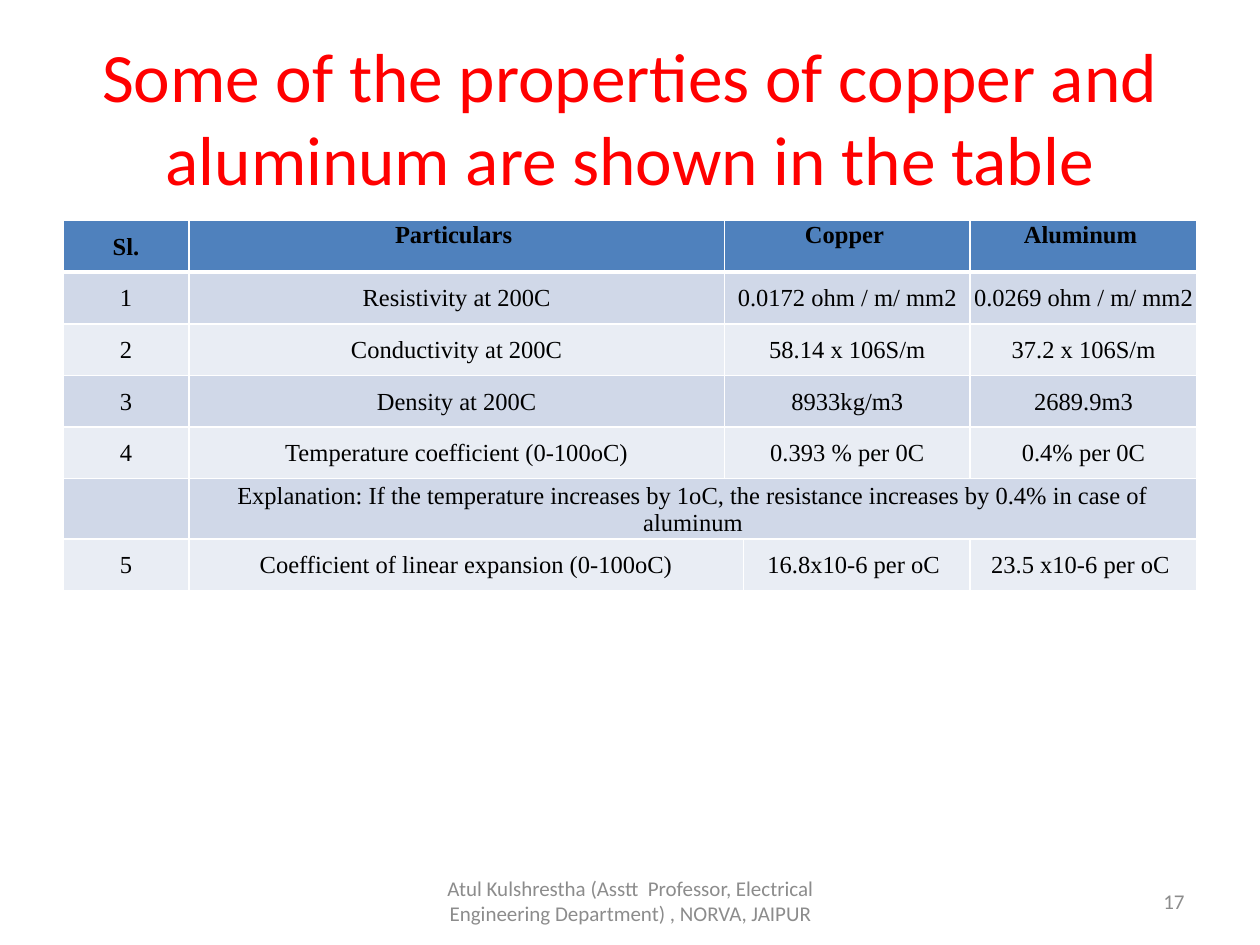
from dataclasses import dataclass

from lxml.etree import SubElement
from pptx import Presentation
from pptx.dml.color import RGBColor
from pptx.enum.text import MSO_ANCHOR, PP_ALIGN
from pptx.oxml.ns import qn
from pptx.util import Inches, Pt


@dataclass(frozen=True)
class Theme:
    heading_font: str = "Calibri"
    table_font: str = "Times New Roman"
    title_size: float = 39.6
    table_size: float = 14
    footer_size: float = 12
    title: str = "FF0000"
    table_text: str = "000000"
    footer: str = "8C8C8C"
    header_fill: str = "4F81BD"
    bands: tuple[str, str] = ("D0D8E8", "E9EDF4")
    border: str = "FFFFFF"
    border_width: float = 1
    header_rule: float = 3


@dataclass(frozen=True)
class Label:
    text: str
    box: tuple[float, float, float, float]
    size: float
    color: str
    align: PP_ALIGN = PP_ALIGN.CENTER


@dataclass(frozen=True)
class Row:
    texts: tuple[str, ...]
    spans: tuple[int, ...] = (1, 1, 2, 1)
    height: float = 0.41


THEME = Theme()

LABELS = (
    Label("Some of the properties of copper and aluminum are shown in the table",
          (0.5, 0.3, 9, 1.25), THEME.title_size, THEME.title),
    Label("17", (7.17, 6.95, 2.33, 0.4), THEME.footer_size, THEME.footer, PP_ALIGN.RIGHT),
    Label("Atul Kulshrestha (Asstt  Professor, Electrical Engineering Department) , NORVA, JAIPUR",
          (3.42, 6.95, 3.17, 0.4), THEME.footer_size, THEME.footer),
)

COLUMN_WIDTHS = (1, 4.25, 0.15, 1.8, 1.8)
PROPERTIES = (
    Row(("Sl.", "Particulars ", "Copper ", "Aluminum ")),
    Row(("1", "Resistivity at 200C", "0.0172 ohm / m/ mm2", "0.0269 ohm / m/ mm2")),
    Row(("2", "Conductivity at 200C", "58.14 x 106S/m", "37.2 x 106S/m")),
    Row(("3", "Density at 200C", "8933kg/m3", "2689.9m3")),
    Row(("4", "Temperature coefficient (0-100oC)", "0.393 % per 0C", "0.4% per 0C")),
    Row(("", "Explanation: If the temperature increases by 1oC, the resistance "
         "increases by 0.4% in case of aluminum"), (1, 4), 0.48),
    Row(("5", "Coefficient of linear expansion (0-100oC)",
         "16.8x10-6 per oC ", "23.5 x10-6 per oC "), (1, 2, 1, 1)),
)


def set_format(target, values: dict) -> None:
    for attribute, value in values.items():
        setattr(target, attribute, value)


def write(paragraph, text: str, align: PP_ALIGN, color: str, font: dict) -> None:
    paragraph.text = text
    paragraph.alignment = align
    set_format(paragraph.font, font)
    for run in paragraph.runs:
        set_format(run.font, font)
        run.font.color.rgb = RGBColor.from_string(color)


def add_label(slide, label: Label) -> None:
    frame = slide.shapes.add_textbox(*map(Inches, label.box)).text_frame
    set_format(frame, {"word_wrap": True, "vertical_anchor": MSO_ANCHOR.MIDDLE})
    write(frame.paragraphs[0], label.text, label.align, label.color,
          {"name": THEME.heading_font, "size": Pt(label.size)})


def add_borders(cell, row_index: int) -> None:
    """Rule all four sides, with a heavier line between header and body."""
    heavy_side = {0: "lnB", 1: "lnT"}.get(row_index)
    properties = cell._tc.get_or_add_tcPr()
    for side in ("lnL", "lnR", "lnT", "lnB"):
        width = THEME.header_rule if side == heavy_side else THEME.border_width
        line = SubElement(properties, qn(f"a:{side}"), w=str(Pt(width)))
        SubElement(SubElement(line, qn("a:solidFill")), qn("a:srgbClr"), val=THEME.border)


def style_cell(cell, row_index: int, column_index: int) -> None:
    is_header = row_index == 0
    add_borders(cell, row_index)
    cell.fill.solid()
    fill = THEME.header_fill if is_header else THEME.bands[(row_index - 1) % 2]
    cell.fill.fore_color.rgb = RGBColor.from_string(fill)
    anchor = MSO_ANCHOR.TOP if is_header and column_index else MSO_ANCHOR.MIDDLE
    set_format(cell, {
        "margin_left": Inches(0.01), "margin_right": Inches(0.01),
        "margin_top": Inches(0.01), "margin_bottom": 0,
        "vertical_anchor": anchor,
    })


def add_property_table(slide, rows: tuple[Row, ...]) -> None:
    table = slide.shapes.add_table(
        len(rows), len(COLUMN_WIDTHS), Inches(0.5), Inches(1.75),
        Inches(sum(COLUMN_WIDTHS)), Inches(sum(row.height for row in rows))).table
    for column, width in zip(table.columns, COLUMN_WIDTHS):
        column.width = Inches(width)
    for row_index, row in enumerate(rows):
        table.rows[row_index].height = Inches(row.height)
        for column_index in range(len(COLUMN_WIDTHS)):
            style_cell(table.cell(row_index, column_index), row_index, column_index)
        start = 0
        for text, span in zip(row.texts, row.spans):
            cell = table.cell(row_index, start)
            if span > 1:
                cell.merge(table.cell(row_index, start + span - 1))
            write(cell.text_frame.paragraphs[0], text, PP_ALIGN.CENTER, THEME.table_text,
                  {"name": THEME.table_font, "size": Pt(THEME.table_size),
                   "bold": row_index == 0})
            start += span


def main() -> None:
    presentation = Presentation()
    set_format(presentation, {"slide_width": Inches(10), "slide_height": Inches(7.5)})
    slide = presentation.slides.add_slide(presentation.slide_layouts[6])
    add_property_table(slide, PROPERTIES)
    for label in LABELS:
        add_label(slide, label)
    presentation.save("out.pptx")


if __name__ == "__main__":
    main()
